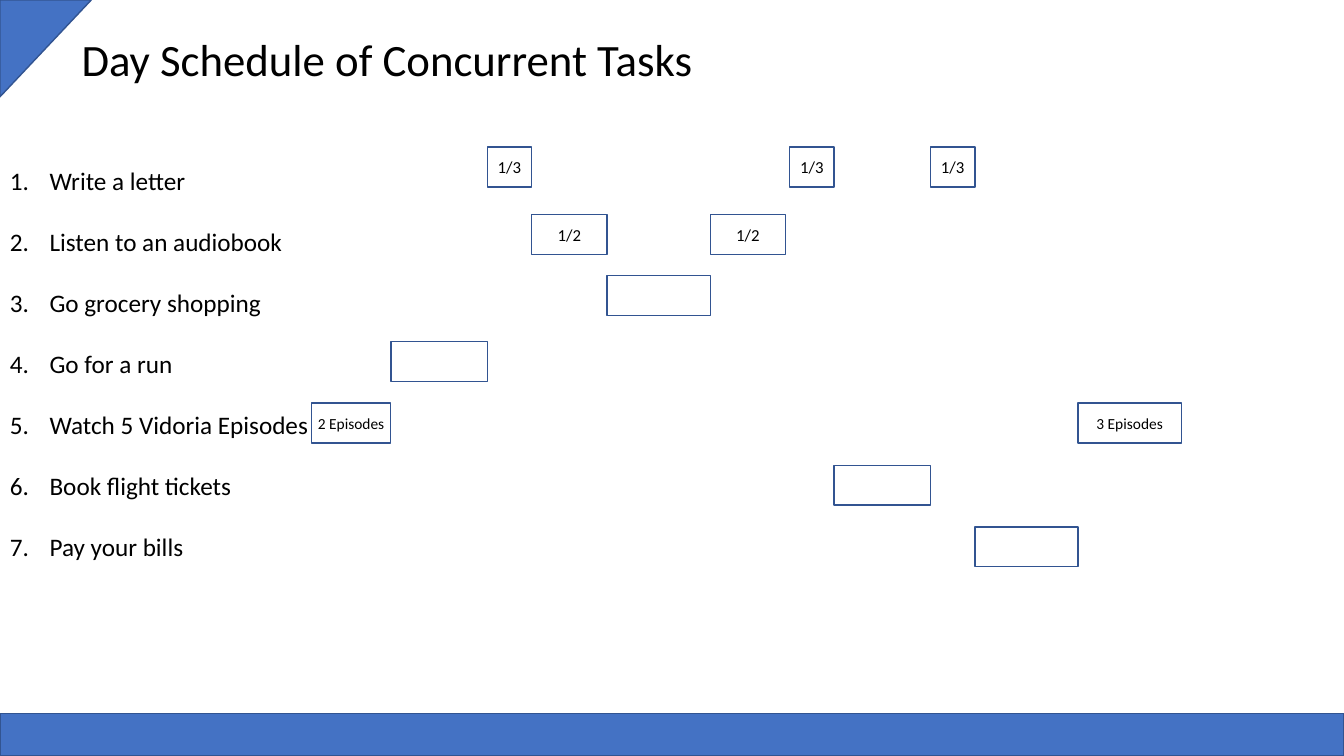
import pptx
import pptx.util
import pptx.dml.color
import pptx.enum.shapes
import pptx.enum.text
import pptx.oxml.ns
from lxml import etree

Cm, Pt = pptx.util.Cm, pptx.util.Pt
SHAPE = pptx.enum.shapes.MSO_SHAPE
ALIGN = pptx.enum.text.PP_ALIGN
ANCHOR = pptx.enum.text.MSO_ANCHOR


def color(hex_string):
    return pptx.dml.color.RGBColor.from_string(hex_string)


class ScheduleSlide:
    font, ink = "Calibri", "000000"
    accent, outline, paper = "4472C4", "325491", "FFFFFF"

    def __init__(self, prs):
        self.s = prs.slides.add_slide(prs.slide_layouts[5])

    def set_text(self, p, text, size, align=ALIGN.LEFT):
        p.text = text
        p.alignment = align
        p.font.name = self.font
        p.font.size = Pt(size)
        p.font.color.rgb = color(self.ink)

    def title(self, text, x, y, w, h):
        sp = self.s.shapes.title
        sp.left, sp.top, sp.width, sp.height = Cm(x), Cm(y), Cm(w), Cm(h)
        tf = sp.text_frame
        tf.word_wrap = False
        tf.vertical_anchor = ANCHOR.MIDDLE
        self.set_text(tf.paragraphs[0], text, 32)

    def shape(self, kind, x, y, w, h, fill):
        sp = self.s.shapes.add_shape(kind, Cm(x), Cm(y), Cm(w), Cm(h))
        sp.shadow.inherit = False
        sp.fill.solid()
        sp.fill.fore_color.rgb = color(fill)
        sp.line.color.rgb = color(self.outline)
        sp.line.width = Pt(1)
        return sp

    def bar(self, x, y, w, label, size):
        sp = self.shape(SHAPE.RECTANGLE, x, y, w, 1, self.paper)
        if label:
            tf = sp.text_frame
            tf.word_wrap = False
            tf.margin_left = tf.margin_right = 0
            tf.vertical_anchor = ANCHOR.MIDDLE
            self.set_text(tf.paragraphs[0], label, size, ALIGN.CENTER)

    def numbered_list(self, items, x, y, w, h):
        tf = self.s.shapes.add_textbox(Cm(x), Cm(y), Cm(w), Cm(h)).text_frame
        tf.word_wrap = True
        for i, item in enumerate(items):
            p = tf.paragraphs[0] if i == 0 else tf.add_paragraph()
            self.set_text(p, item, 18)
            p.space_after = Pt(22)
            # Hanging number
            pPr = p._p.get_or_add_pPr()
            pPr.set("marL", str(Cm(1)))
            pPr.set("indent", str(-Cm(1)))
            bullet = etree.Element(pptx.oxml.ns.qn("a:buAutoNum"), type="arabicPeriod")
            pPr.find(pptx.oxml.ns.qn("a:spcAft")).addnext(bullet)


def main():
    prs = pptx.Presentation()
    prs.slide_width, prs.slide_height = Cm(33.87), Cm(19.05)
    slide = ScheduleSlide(prs)

    # Frame and title
    slide.shape(SHAPE.RECTANGLE, 0, 17.98, 33.87, 1.07, slide.accent)
    corner = slide.shape(SHAPE.RIGHT_TRIANGLE, -0.07, 0.07, 2.44, 2.3, slide.accent)
    corner.rotation = 90
    slide.title("Day Schedule of Concurrent Tasks", 1.8, 0.66, 16.08, 1.63)

    # Tasks, each with the top of its row of bars
    tasks = {
        "Write a letter": 3.71,
        "Listen to an audiobook": 5.41,
        "Go grocery shopping": 6.95,
        "Go for a run": 8.61,
        "Watch 5 Vidoria Episodes": 10.16,
        "Book flight tickets": 11.73,
        "Pay your bills": 13.28,
    }
    slide.numbered_list(tasks, 0, 4.03, 10.8, 10.25)
    row_tops = list(tasks.values())

    # Day plan in order: task number, width, label, label size, pause after
    plan = [
        (5, 2.0, "2 Episodes", 11, 0),
        (4, 2.43, "", 12, 0),
        (1, 1.12, "1/3", 12, 0),
        (2, 1.9, "1/2", 12, 0),
        (3, 2.6, "", 12, 0),
        (2, 1.9, "1/2", 12, 0.1),
        (1, 1.12, "1/3", 12, 0),
        (6, 2.43, "", 12, 0),
        (1, 1.12, "1/3", 12, 0),
        (7, 2.6, "", 12, 0),
        (5, 2.6, "3 Episodes", 11, 0),
    ]
    x = 7.85
    for task, width, label, size, pause in plan:
        slide.bar(x, row_tops[task - 1], width, label, size)
        x += width + pause

    prs.save("out.pptx")


if __name__ == "__main__":
    main()
